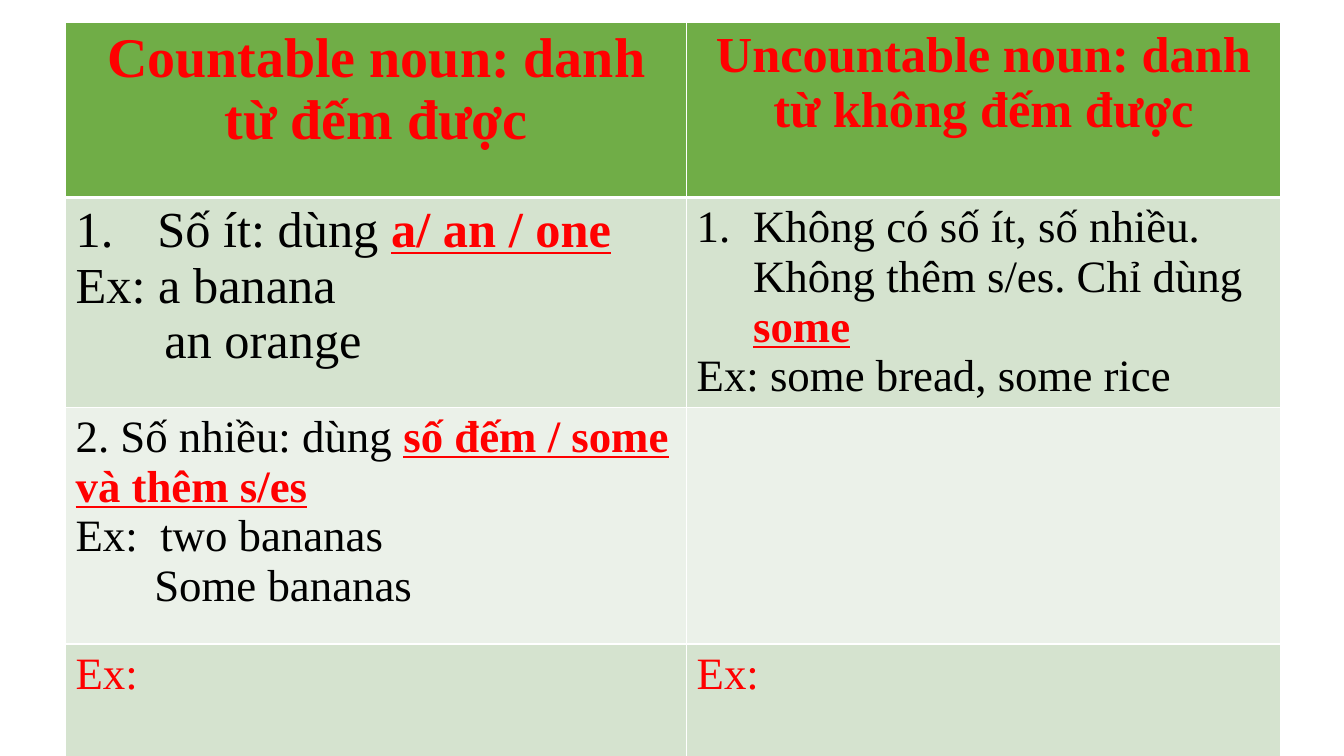
from lxml.etree import SubElement
from pptx import Presentation
from pptx.dml.color import RGBColor
from pptx.enum.text import PP_ALIGN as Align
from pptx.oxml.ns import qn
from pptx.util import Inches, Pt

COLORS = {"header": "70AD47", "odd": "D5E3CF", "even": "EBF1E9",
          "line": "FFFFFF", "text": "000000", "key": "FF0000"}


def write(cell, paragraphs, size, color="text", bold=False, align=Align.LEFT):
    """Fill a cell from (text, layout) pairs; text between asterisks is a key phrase.

    The layout may hold left (indent), number (hanging numeral) and tab, in inches.
    """
    frame = cell.text_frame
    for index, (text, layout) in enumerate(paragraphs):
        paragraph = frame.add_paragraph() if index else frame.paragraphs[0]
        paragraph.alignment = align
        props = paragraph._p.get_or_add_pPr()
        if "left" in layout:
            props.set("marL", str(Inches(layout["left"])))
        if "number" in layout:
            props.set("marL", str(Inches(layout["number"])))
            props.set("indent", str(-Inches(layout["number"])))
            SubElement(props, qn("a:buAutoNum"), type="arabicPeriod")
        if "tab" in layout:
            stops = SubElement(props, qn("a:tabLst"))
            SubElement(stops, qn("a:tab"), pos=str(Inches(layout["tab"])), algn="l")
        for part, words in enumerate(text.split("*")):
            if not words:
                continue
            key = part % 2 == 1
            run = paragraph.add_run()
            run.text = words
            run.font.name = "Times New Roman"
            run.font.size = Pt(size)
            run.font.bold = bold or key
            run.font.underline = key
            run.font.color.rgb = RGBColor.from_string(COLORS["key" if key else color])


def set_borders(cell, top, bottom):
    props = cell._tc.get_or_add_tcPr()
    for side, width in (("lnL", 1), ("lnR", 1), ("lnT", top), ("lnB", bottom)):
        line = SubElement(props, qn(f"a:{side}"), w=str(Pt(width)))
        fill = SubElement(line, qn("a:solidFill"))
        SubElement(fill, qn("a:srgbClr"), val=COLORS["line"])


prs = Presentation()
prs.slide_width, prs.slide_height = Inches(13.33), Inches(7.5)
slide = prs.slides.add_slide(prs.slide_layouts[6])

column_widths = [6.16, 5.89]
row_heights = [1.74, 2.08, 2.35, 2.17]
nouns = slide.shapes.add_table(
    len(row_heights), len(column_widths), Inches(0.65), Inches(0.22),
    Inches(sum(column_widths)), Inches(sum(row_heights))).table
for column, width in zip(nouns.columns, column_widths):
    column.width = Inches(width)
for row, height in zip(nouns.rows, row_heights):
    row.height = Inches(height)

row_fills = ["header", "odd", "even", "odd"]
for row_index, row in enumerate(nouns.rows):
    for cell in row.cells:
        set_borders(cell, top=3 if row_index == 1 else 1,
                    bottom=3 if row_index == 0 else 1)
        cell.fill.solid()
        cell.fill.fore_color.rgb = RGBColor.from_string(COLORS[row_fills[row_index]])

headings = [("Countable noun: danh từ đếm được", 40),
            ("Uncountable noun: danh từ không đếm được", 36)]
for column, (heading, size) in enumerate(headings):
    write(nouns.cell(0, column), [(heading, {})], size,
          color="key", bold=True, align=Align.CENTER)
    write(nouns.cell(3, column), [("Ex:", {})], 32, color="key")

write(nouns.cell(1, 0), [
    ("Số ít: dùng *a/ an / one*", {"number": 0.81}),
    ("Ex: a banana", {}),
    ("an orange", {"left": 0.88}),
], 36)
write(nouns.cell(1, 1), [
    ("Không có số ít, số nhiều. Không thêm s/es. Chỉ dùng *some*", {"number": 0.56}),
    ("Ex: some bread, some rice", {}),
], 32)
write(nouns.cell(2, 0), [
    ("2. Số nhiều: dùng *số đếm / some và thêm s/es*", {}),
    ("Ex:\ttwo bananas", {"tab": 0.84}),
    ("Some bananas", {"left": 0.78}),
], 32)

prs.save("out.pptx")
